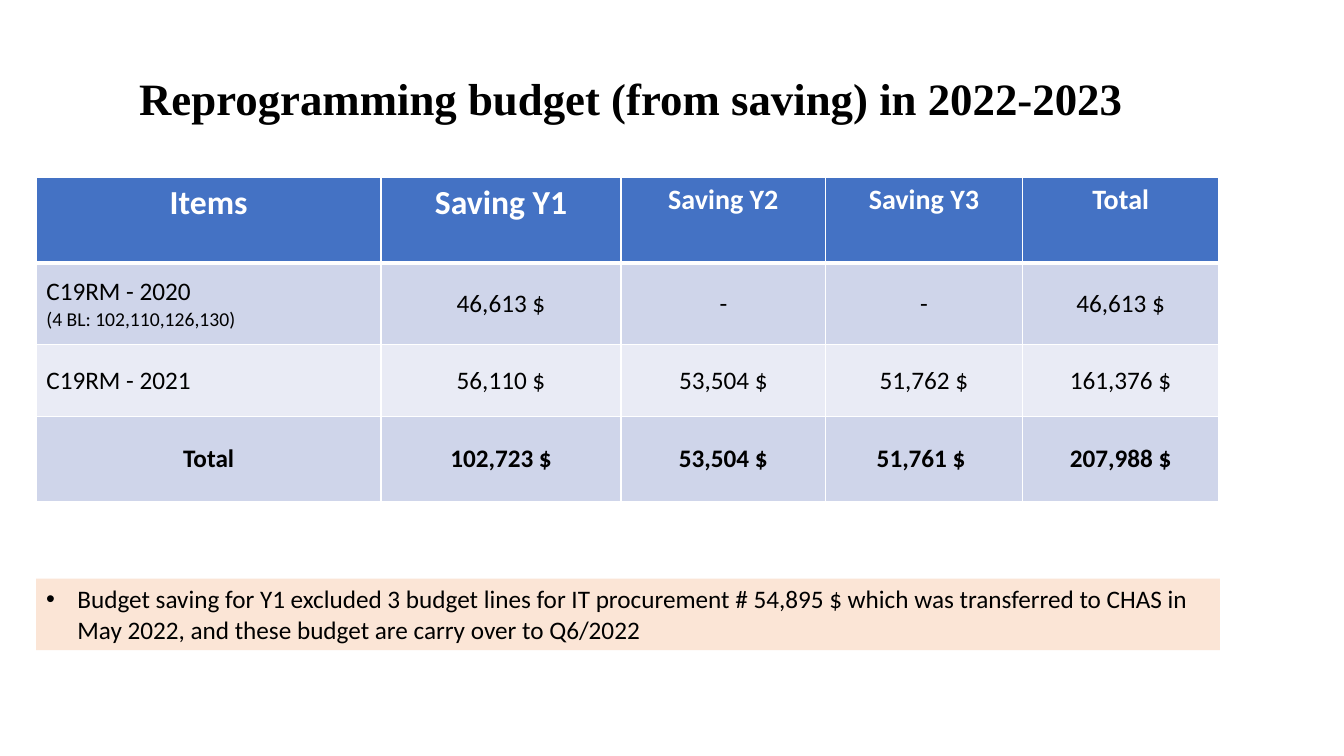
from lxml import etree
from pptx import Presentation
from pptx import util as u
from pptx.dml.color import RGBColor
from pptx.enum import shapes, text
from pptx.oxml.ns import qn

BLACK = RGBColor(0x00, 0x00, 0x00)
WHITE = RGBColor(0xFF, 0xFF, 0xFF)
BLUE = RGBColor(0x44, 0x72, 0xC4)
BAND_DARK = RGBColor(0xCF, 0xD5, 0xEA)
BAND_LIGHT = RGBColor(0xE9, 0xEB, 0xF5)
PEACH = RGBColor(0xFB, 0xE5, 0xD6)

COLUMNS = [3.42, 2.38, 2.03, 1.95, 1.95]
ROWS = [0.85, 0.81, 0.71, 0.85]
BUDGET = [
    ["Items", "Saving Y1", "Saving Y2", "Saving Y3", "Total"],
    ["C19RM - 2020", "46,613 $", "-", "-", "46,613 $"],
    ["C19RM - 2021", "56,110 $", "53,504 $", "51,762 $", "161,376 $"],
    ["Total", "102,723 $", "53,504 $", "51,761 $ ", "207,988 $"],
]
DETAIL = "(4 BL: 102,110,126,130)"
NOTE = ("Budget saving for Y1 excluded 3 budget lines for IT procurement # 54,895 $ "
        "which was transferred to CHAS in May 2022, and these budget are carry over to Q6/2022")


def add_text(p, words, size=18, color=BLACK, bold=False, font="Calibri", align=None):
    r = p.add_run()
    r.text = words
    r.font.size = u.Pt(size)
    r.font.name = font
    r.font.bold = bold
    r.font.color.rgb = color
    if align is not None:
        p.alignment = align


def set_borders(cell, bottom):
    """Give a cell white borders, 1 pt wide except at the bottom."""
    tc_pr = cell._tc.get_or_add_tcPr()
    for i, side in enumerate("LRTB"):
        width = bottom if side == "B" else 1
        ln = etree.Element(qn(f"a:ln{side}"), w=str(u.Pt(width)))
        fill = etree.SubElement(ln, qn("a:solidFill"))
        etree.SubElement(fill, qn("a:srgbClr"), val=str(WHITE))
        tc_pr.insert(i, ln)


class BudgetSlide:
    def __init__(self, prs):
        self.s = prs.slides.add_slide(prs.slide_layouts[5])

    def title(self, words, left, top, width, height):
        sp = self.s.shapes.title
        sp.left, sp.top = u.Inches(left), u.Inches(top)
        sp.width, sp.height = u.Inches(width), u.Inches(height)
        tf = sp.text_frame
        tf.auto_size = text.MSO_AUTO_SIZE.NONE
        tf.vertical_anchor = text.MSO_ANCHOR.TOP
        tf.margin_top = u.Inches(0.02)
        p = tf.paragraphs[0]
        p.line_spacing = 0.9
        add_text(p, words, size=32, bold=True, font="Times New Roman",
                 align=text.PP_ALIGN.LEFT)

    def table(self, left, top):
        table = self.s.shapes.add_table(
            len(ROWS), len(COLUMNS), u.Inches(left), u.Inches(top),
            u.Inches(sum(COLUMNS)), u.Inches(sum(ROWS))).table
        for column, width in zip(table.columns, COLUMNS):
            column.width = u.Inches(width)
        for row, height in zip(table.rows, ROWS):
            row.height = u.Inches(height)
        for i, values in enumerate(BUDGET):
            for j, value in enumerate(values):
                self.cell(table.cell(i, j), i, j, value)
        add_text(table.cell(1, 0).text_frame.add_paragraph(), DETAIL, size=14)

    def cell(self, cell, i, j, value):
        header, total = i == 0, i == len(ROWS) - 1
        cell.fill.solid()
        cell.fill.fore_color.rgb = BLUE if header else BAND_DARK if i % 2 else BAND_LIGHT
        set_borders(cell, bottom=3 if header else 1)
        cell.vertical_anchor = text.MSO_ANCHOR.TOP if header else text.MSO_ANCHOR.MIDDLE
        size = (24 if j < 2 else 20) if header else 18
        centred = header or total or j > 0
        add_text(cell.text_frame.paragraphs[0], value, size=size,
                 color=WHITE if header else BLACK, bold=header or total,
                 align=text.PP_ALIGN.CENTER if centred else text.PP_ALIGN.LEFT)

    def note(self, words, left, top, width, height):
        sp = self.s.shapes.add_shape(
            shapes.MSO_SHAPE.RECTANGLE, u.Inches(left), u.Inches(top),
            u.Inches(width), u.Inches(height))
        sp.shadow.inherit = False
        sp.fill.solid()
        sp.fill.fore_color.rgb = PEACH
        sp.line.fill.background()
        tf = sp.text_frame
        tf.word_wrap = True
        tf.vertical_anchor = text.MSO_ANCHOR.TOP
        p = tf.paragraphs[0]
        add_text(p, words, align=text.PP_ALIGN.LEFT)
        p_pr = p._p.get_or_add_pPr()
        indent = u.Inches(0.31)
        p_pr.set("marL", str(indent))
        p_pr.set("indent", str(-indent))
        etree.SubElement(p_pr, qn("a:buFont"), typeface="Arial")
        etree.SubElement(p_pr, qn("a:buChar"), char="•")


def main():
    prs = Presentation()
    prs.slide_width, prs.slide_height = u.Inches(13.33), u.Inches(7.5)
    slide = BudgetSlide(prs)
    slide.title("Reprogramming budget (from saving) in 2022-2023", 1.28, 0.74, 11.93, 0.9)
    slide.table(0.36, 1.76)
    slide.note(NOTE, 0.36, 5.74, 11.74, 0.71)
    prs.save("out.pptx")


if __name__ == "__main__":
    main()
